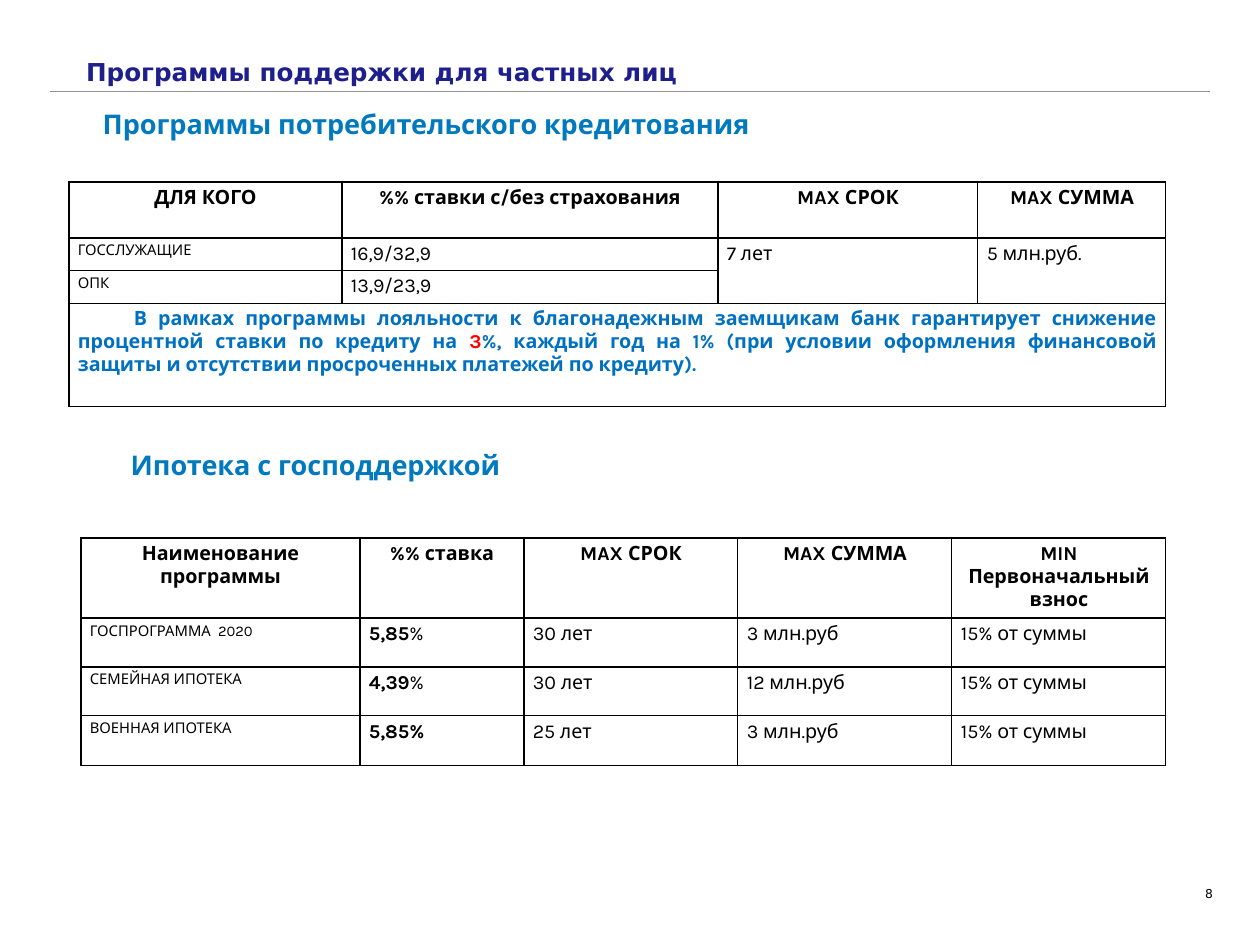
from dataclasses import dataclass, field
from lxml import etree
from pptx import Presentation
from pptx import util as u
from pptx.dml.color import RGBColor
from pptx.enum import shapes, text
from pptx.oxml import ns

TITLE = ("Программы поддержки для частных лиц", "title", (82, 52, 971, 40))
LABELS = [
    ("Программы потребительского кредитования", "sub", "LEFT", (94, 103, 729, 42)),
    ("Ипотека с господдержкой", "sub", "LEFT", (122, 444, 745, 42)),
    ("8", "page", "RIGHT", (1167, 882, 50, 24)),
]
RULE = (50, 91, 1210, 91)
NOTE = [
    ("В рамках программы лояльности к благонадежным заемщикам банк гарантирует "
     "снижение процентной ставки по кредиту на ", "note"),
    ("3", "alert"),
    ("%, каждый год на 1% (при условии оформления финансовой защиты и отсутствии "
     "просроченных платежей по кредиту).", "note"),
]
TABLES = [
    {
        "spot": (69, 182),
        "cols": (273, 376, 260, 188),
        "rows": (56, 32, 33, 103),
        "data": [
            ["ДЛЯ КОГО", "%% ставки с/без страхования", "MAX СРОК", "MAX СУММА"],
            ["ГОССЛУЖАЩИЕ", "16,9/32,9", "7 лет", "5 млн.руб."],
            ["ОПК", "13,9/23,9"],
            [NOTE],
        ],
        "spans": [(1, 2, 2, 2), (1, 3, 2, 3), (3, 0, 3, 3)],
    },
    {
        "spot": (81, 538),
        "cols": (279, 164, 214, 214, 214),
        "rows": (80, 49, 49, 50),
        "data": [
            ["Наименование программы", "%% ставка", "MAX СРОК", "MAX СУММА",
             "MIN Первоначальный взнос"],
            ["ГОСПРОГРАММА  2020", [("5,85", "rate"), ("%", "cell")],
             "30 лет", "3 млн.руб", "15% от суммы"],
            ["СЕМЕЙНАЯ ИПОТЕКА", [("4,39", "rate"), ("%", "cell")],
             "30 лет", "12 млн.руб", "15% от суммы"],
            ["ВОЕННАЯ ИПОТЕКА", [("5,85%", "rate")],
             "25 лет", "3 млн.руб", "15% от суммы"],
        ],
        "spans": [],
    },
]


def face(size, color, bold=False, name="Karla"):
    return {"size": u.Pt(size), "bold": bold, "name": name, "color": color}


@dataclass
class Theme:
    rule: str = "929292"
    edge: str = "000000"
    fonts: dict = field(default_factory=lambda: {
        "title": face(20, "1E1E8C", True, "DejaVu Sans"),
        "page": face(10, "000000", name="DejaVu Sans"),
        "sub": face(22, "0079BF", True),
        "head": face(16, "000000", True),
        "cell": face(16, "000000"),
        "rate": face(16, "000000", True),
        "small": face(12, "020202"),
        "note": face(16, "0070C0", True),
        "alert": face(16, "FF0000", True),
    })


LOOK = Theme()
SCALE = 10320


def px(*nums):
    return [u.Emu(n * SCALE) for n in nums]


def write(para, runs, align="LEFT"):
    para.alignment = getattr(text.PP_ALIGN, align)
    for words, style in runs:
        run = para.add_run()
        run.text = words
        for key, val in LOOK.fonts[style].items():
            if key == "color":
                run.font.color.rgb = RGBColor.from_string(val)
            else:
                setattr(run.font, key, val)


def frame(cell):
    props = cell._tc.get_or_add_tcPr()
    for side in ("lnL", "lnR", "lnT", "lnB"):
        line = etree.SubElement(props, ns.qn("a:" + side), w="12700")
        fill = etree.SubElement(line, ns.qn("a:solidFill"))
        etree.SubElement(fill, ns.qn("a:srgbClr"), val=LOOK.edge)
    cell.fill.background()


def grid(slide, part):
    cols, rows = part["cols"], part["rows"]
    box = px(*part["spot"], sum(cols), sum(rows))
    table = slide.shapes.add_table(len(rows), len(cols), *box).table
    table.first_row = table.horz_banding = False
    for col, width in zip(table.columns, px(*cols)):
        col.width = width
    for row, height in zip(table.rows, px(*rows)):
        row.height = height
    for cell in table.iter_cells():
        frame(cell)
    for top, left, low, right in part["spans"]:
        table.cell(top, left).merge(table.cell(low, right))
    for r, row in enumerate(part["data"]):
        for c, item in enumerate(row):
            para = table.cell(r, c).text_frame.paragraphs[0]
            style = "head" if r == 0 else "small" if c == 0 else "cell"
            align = "CENTER" if r == 0 else "LEFT"
            if item is NOTE:
                align = "JUSTIFY"
                para._p.get_or_add_pPr().set("indent", str(56 * SCALE))
            write(para, [(item, style)] if isinstance(item, str) else item, align)


def place(shape, box):
    for key, val in zip(("left", "top", "width", "height"), px(*box)):
        setattr(shape, key, val)


def main():
    deck = Presentation()
    deck.slide_width, deck.slide_height = px(1260, 945)
    slide = deck.slides.add_slide(deck.slide_layouts[5])

    rule = slide.shapes.add_connector(shapes.MSO_CONNECTOR.STRAIGHT, *px(*RULE))
    rule.line.color.rgb = RGBColor.from_string(LOOK.rule)
    rule.line.width = u.Pt(0.75)
    etree.SubElement(rule._element.spPr, ns.qn("a:effectLst"))

    words, style, box = TITLE
    title = slide.shapes.title
    place(title, box)
    body = title.text_frame
    sides = dict.fromkeys(("margin_left", "margin_right", "margin_top", "margin_bottom"), px(4)[0])
    for key, val in {**sides, "vertical_anchor": text.MSO_ANCHOR.MIDDLE}.items():
        setattr(body, key, val)
    write(body.paragraphs[0], [(words, style)])

    for words, style, align, box in LABELS:
        body = slide.shapes.add_textbox(*px(*box)).text_frame
        body.word_wrap = True
        if style == "page":
            for key, val in sides.items():
                setattr(body, key, val)
        write(body.paragraphs[0], [(words, style)], align)

    for part in TABLES:
        grid(slide, part)
    deck.save("out.pptx")


if __name__ == "__main__":
    main()
